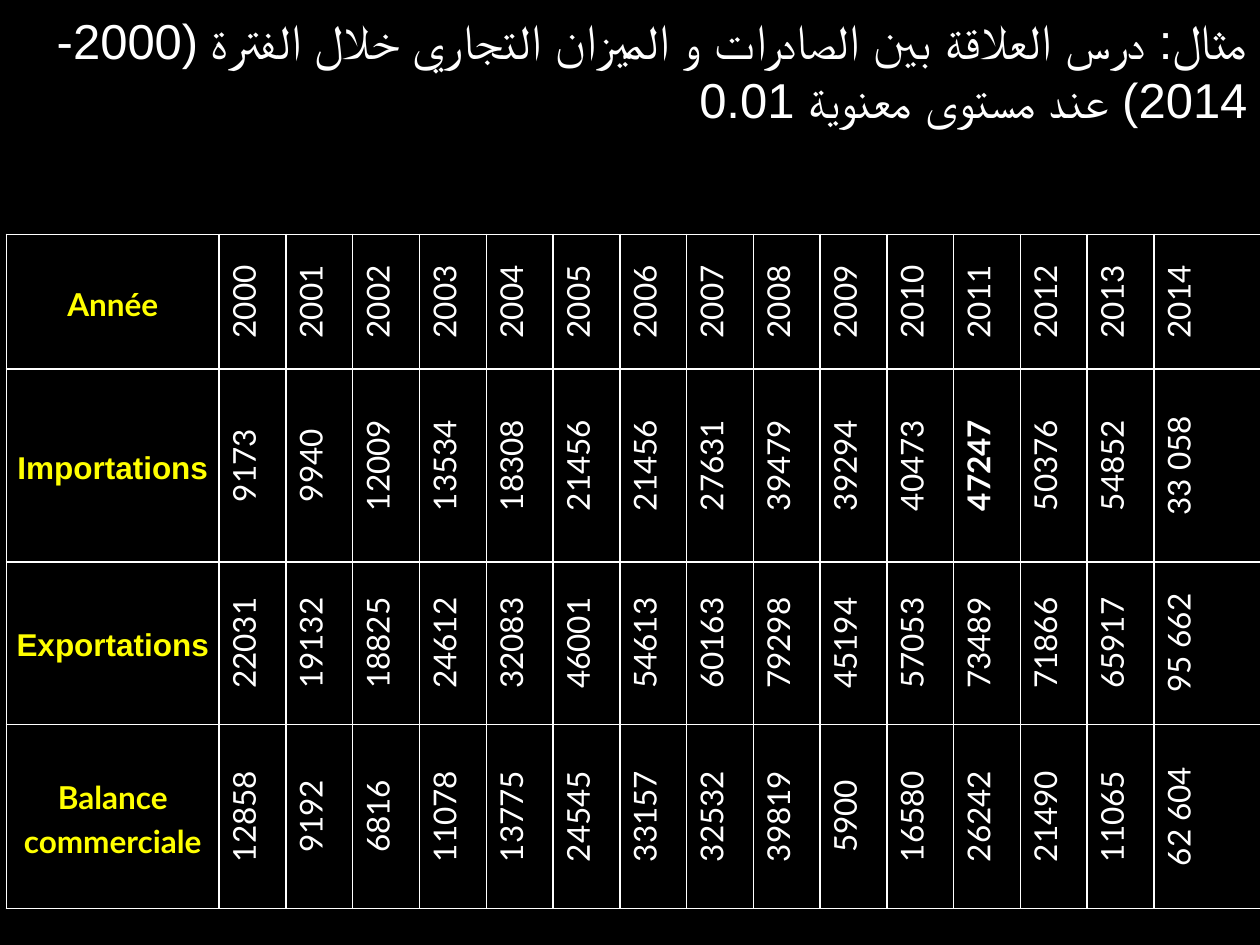
import pptx
import pptx.util
import pptx.dml.color
import pptx.enum.text
import pptx.oxml
import pptx.oxml.ns
from pptx.util import Inches

ALIGN = pptx.enum.text.PP_ALIGN
MIDDLE = pptx.enum.text.MSO_ANCHOR.MIDDLE
WHITE, YELLOW, BLACK = "FFFFFF", "FFFF00", "000000"


def style(par, face, size, tint, bold=False, rtl=False):
    """Format the single run of a paragraph, for Latin and Arabic script."""
    run = par.runs[0]
    font = run.font
    font.name, font.size, font.bold = face, pptx.util.Pt(size), bold
    font.color.rgb = pptx.dml.color.RGBColor.from_string(tint)
    script = pptx.oxml.parse_xml(
        f'<a:cs {pptx.oxml.ns.nsdecls("a")} typeface="{face}"/>')
    run._r.get_or_add_rPr().append(script)
    if rtl:
        par._p.get_or_add_pPr().set("rtl", "1")


def frame(cell, tint):
    """Draw a 1 pt line on all four sides of a cell."""
    for side in ("lnL", "lnR", "lnT", "lnB"):
        cell._tc.get_or_add_tcPr().append(pptx.oxml.parse_xml(
            f'<a:{side} {pptx.oxml.ns.nsdecls("a")} w="12700"><a:solidFill>'
            f'<a:srgbClr val="{tint}"/></a:solidFill></a:{side}>'))


deck = pptx.Presentation()
deck.slide_width, deck.slide_height = Inches(10), Inches(7.5)
slide = deck.slides.add_slide(deck.slide_layouts[5])
back = slide.background.fill
back.solid()
back.fore_color.rgb = pptx.dml.color.RGBColor.from_string(BLACK)

# Title
title = slide.shapes.title
title.left, title.top = Inches(0), Inches(0.03)
title.width, title.height = Inches(10), Inches(1.04)
text = title.text_frame
text.text = ("مثال: درس العلاقة بين الصادرات و الميزان التجاري خلال "
             "الفترة (2000-2014) عند مستوى معنوية 0.01")
text.word_wrap = True
text.auto_size = pptx.enum.text.MSO_AUTO_SIZE.SHAPE_TO_FIT_TEXT
text.vertical_anchor = MIDDLE
text.paragraphs[0].alignment = ALIGN.RIGHT
style(text.paragraphs[0], "Arial", 28, WHITE, rtl=True)

# Trade table: label, label font, right-to-left label, row height, values
rows = [
    ("Année", "Lato", True, 1.07, [str(year) for year in range(2000, 2015)]),
    ("Importations", "Arial", False, 1.53,
     ["9173", "9940", "12009", "13534", "18308", "21456", "21456", "27631",
      "39479", "39294", "40473", "47247", "50376", "54852", "33 058"]),
    ("Exportations", "Arial", False, 1.29,
     ["22031", "19132", "18825", "24612", "32083", "46001", "54613", "60163",
      "79298", "45194", "57053", "73489", "71866", "65917", "95 662"]),
    ("Balance commerciale", "Lato", True, 1.46,
     ["12858", "9192", "6816", "11078", "13775", "24545", "33157", "32532",
      "39819", "5900", "16580", "26242", "21490", "11065", "62 604"]),
]
widths = [1.69] + [0.53] * 14 + [0.87]
table = slide.shapes.add_table(
    len(rows), len(widths), Inches(0.05), Inches(1.86),
    Inches(9.96), Inches(5.35)).table
table.first_row = table.horz_banding = False
for col, width in zip(table.columns, widths):
    col.width = Inches(width)

for r, (label, face, rtl, height, values) in enumerate(rows):
    table.rows[r].height = Inches(height)
    for c, value in enumerate([label] + values):
        cell = table.cell(r, c)
        cell.text_frame.text = value
        cell.vertical_anchor = MIDDLE
        cell.margin_left = cell.margin_right = Inches(0.05)
        cell.margin_top = cell.margin_bottom = 0
        frame(cell, WHITE)
        cell.fill.background()
        par = cell.text_frame.paragraphs[0]
        par.alignment = ALIGN.CENTER
        par.line_spacing = 1.15
        if c == 0:
            style(par, face, 18, YELLOW, bold=True, rtl=rtl)
        else:
            style(par, "Lato", 18, WHITE, bold=value == "47247")
            cell._tc.get_or_add_tcPr().set("vert", "vert270")

deck.save("out.pptx")
